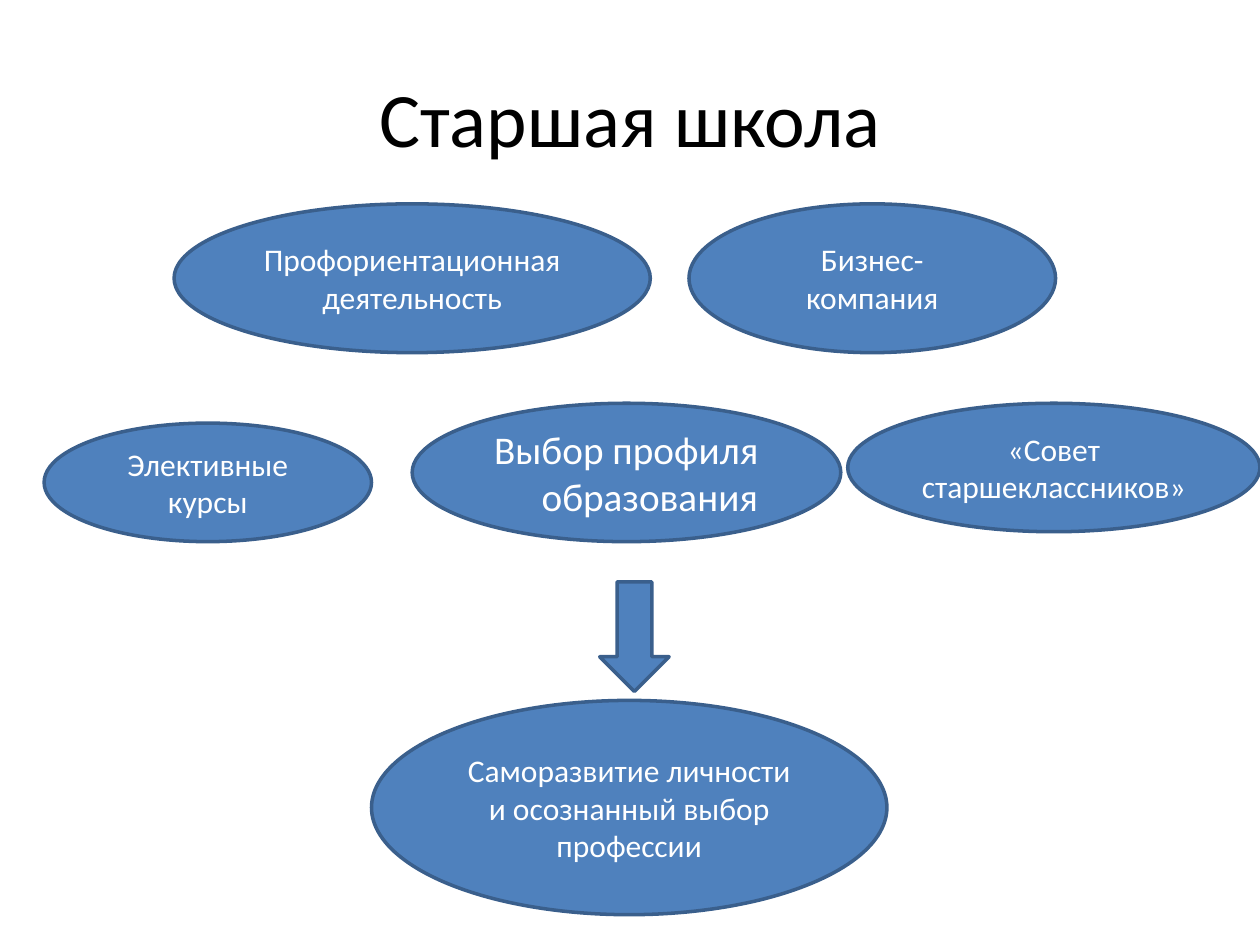
from pptx import Presentation
from pptx import util as u
from pptx.dml.color import RGBColor
from pptx.enum import shapes, text

FONT = "Calibri"
FILL, OUTLINE, WHITE, BLACK = "4F81BD", "3A5F8C", "FFFFFF", "000000"
TOP_ROW, TOP_HEIGHT, MIDDLE_ROW = 4.11, 3, 8.13


def color(value):
    """Turn a hex string into a colour."""
    return RGBColor.from_string(value)


def place(left, top, width, height):
    """Turn a frame in centimetres into lengths."""
    return [u.Cm(length) for length in (left, top, width, height)]


def write(shape, words, size=18, fill=WHITE, hanging=0, before=0):
    """Write one centred paragraph into a shape."""
    frame = shape.text_frame
    frame.word_wrap = True
    frame.vertical_anchor = text.MSO_ANCHOR.MIDDLE
    para = frame.paragraphs[0]
    para.alignment = text.PP_ALIGN.CENTER
    para.space_before = u.Pt(before)
    if hanging:
        properties = para._p.get_or_add_pPr()
        properties.set("marL", str(u.Cm(hanging)))
        properties.set("indent", str(-u.Cm(hanging)))
    span = para.add_run()
    span.text = words
    span.font.name = FONT
    span.font.size = u.Pt(size)
    span.font.color.rgb = color(fill)


def add_title(page, words, frame):
    """Add the slide heading."""
    box = page.shapes.add_textbox(*place(*frame))
    write(box, words, size=44, fill=BLACK)


def add_figure(page, kind, frame):
    """Add a filled and outlined preset shape."""
    shape = page.shapes.add_shape(kind, *place(*frame))
    shape.shadow.inherit = False
    shape.fill.solid()
    shape.fill.fore_color.rgb = color(FILL)
    shape.line.color.rgb = color(OUTLINE)
    shape.line.width = u.Pt(2)
    return shape


def add_oval(page, words, frame, **style):
    """Add an ellipse with a caption."""
    write(add_figure(page, shapes.MSO_SHAPE.OVAL, frame), words, **style)


def main():
    """Build the slide and save it."""
    deck = Presentation()
    deck.slide_width, deck.slide_height = u.Cm(25.4), u.Cm(19.05)
    page = deck.slides.add_slide(deck.slide_layouts[6])

    add_title(page, "Старшая школа", (1.27, 0.76, 22.86, 3.18))
    add_oval(page, "Выбор профиля образования", (8.31, MIDDLE_ROW, 8.64, 2.79),
             size=22.4, hanging=0.95, before=4.5)
    ovals = [
        ("Элективные курсы", (0.89, 8.53, 6.6, 2.39)),
        ("Профориентационная деятельность", (3.51, TOP_ROW, 9.6, TOP_HEIGHT)),
        ("Бизнес-компания", (13.89, TOP_ROW, 7.39, TOP_HEIGHT)),
        ("«Совет старшеклассников»", (17.09, MIDDLE_ROW, 8.31, 2.59)),
        ("Саморазвитие личности и осознанный выбор профессии", (7.49, 14.12, 10.39, 4.32)),
    ]
    for words, frame in ovals:
        add_oval(page, words, frame)
    add_figure(page, shapes.MSO_SHAPE.DOWN_ARROW, (12.09, 11.73, 1.4, 2.21))

    deck.save("out.pptx")


if __name__ == "__main__":
    main()
